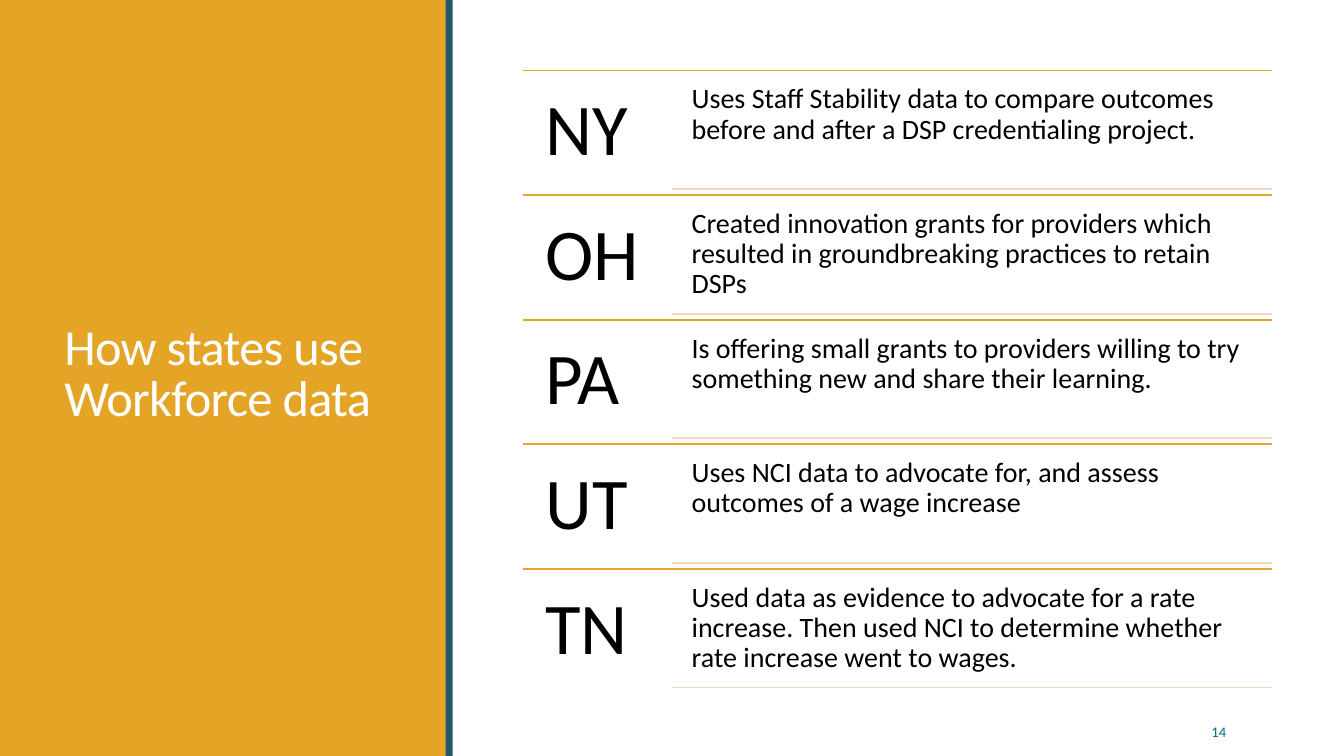
import dataclasses

import pptx
import pptx.dml.color
import pptx.enum.shapes
import pptx.enum.text
import pptx.oxml.ns
import pptx.shapes.autoshape
import pptx.slide
import pptx.util
import lxml.etree

Inches = pptx.util.Inches
Align = pptx.enum.text.PP_ALIGN
Anchor = pptx.enum.text.MSO_ANCHOR


@dataclasses.dataclass(frozen=True)
class Theme:
    gold: str = "E4A426"
    teal: str = "215968"
    peach: str = "F2D8BE"
    ink: str = "000000"
    white: str = "FFFFFF"
    page: str = "076D82"
    font: str = "Calibri"
    title_size: float = 36
    state_size: float = 52
    body_size: float = 20
    page_size: float = 10.5
    rule_width: float = 1.25


@dataclasses.dataclass(frozen=True)
class Box:
    left: float
    top: float
    width: float
    height: float


@dataclasses.dataclass(frozen=True)
class Style:
    size: float
    color: str
    inset: tuple[float, float] = (0.1, 0.05)
    anchor: Anchor = Anchor.TOP
    align: Align = Align.LEFT
    spacing: float = 1.0
    kern: float = 0


@dataclasses.dataclass(frozen=True)
class State:
    code: str
    use: str


THEME = Theme()
TITLE = Style(THEME.title_size, THEME.white, anchor=Anchor.MIDDLE, spacing=0.85, kern=-0.5)
CODE = Style(THEME.state_size, THEME.ink, (0.22, 0.22), spacing=0.9)
BODY = Style(THEME.body_size, THEME.ink, (0.08, 0.08), spacing=0.9)
PAGE = Style(THEME.page_size, THEME.page, anchor=Anchor.MIDDLE, align=Align.RIGHT)

STATES = [
    State("NY", "Uses Staff Stability data to compare outcomes before and after a DSP credentialing project."),
    State("OH", "Created innovation grants for providers which resulted in groundbreaking practices to retain DSPs"),
    State("PA", "Is offering small grants to providers willing to try something new and share their learning."),
    State("UT", "Uses NCI data to advocate for, and assess outcomes of a wage increase"),
    State("TN", "Used data as evidence to advocate for a rate increase. "
                "Then used NCI to determine whether rate increase went to wages."),
]

# Grid of the state list
LEFT, RIGHT, TOP, BOTTOM = 5.19, 12.62, 0.7, 6.88
PITCH = (BOTTOM - TOP) / len(STATES)
CODE_WIDTH = 1.49
BODY_LEFT = 6.78
RULE_LEFT = 6.67
GAP = 0.06


def paint(hue: str) -> pptx.dml.color.RGBColor:
    return pptx.dml.color.RGBColor.from_string(hue)


def add_bar(slide: pptx.slide.Slide, box: Box, hue: str) -> None:
    bar = slide.shapes.add_shape(
        pptx.enum.shapes.MSO_SHAPE.RECTANGLE,
        Inches(box.left), Inches(box.top), Inches(box.width), Inches(box.height))
    bar.shadow.inherit = False
    bar.fill.solid()
    bar.fill.fore_color.rgb = paint(hue)
    bar.line.fill.background()


def add_text(slide: pptx.slide.Slide, box: Box, text: str, style: Style) -> None:
    frame = slide.shapes.add_textbox(
        Inches(box.left), Inches(box.top), Inches(box.width), Inches(box.height)).text_frame
    frame.word_wrap = True
    frame.vertical_anchor = style.anchor
    frame.margin_left = frame.margin_right = Inches(style.inset[0])
    frame.margin_top = frame.margin_bottom = Inches(style.inset[1])
    para = frame.paragraphs[0]
    para.text = text
    para.alignment = style.align
    para.line_spacing = style.spacing
    para.font.name = THEME.font
    para.font.size = pptx.util.Pt(style.size)
    para.font.color.rgb = paint(style.color)
    if style.kern:
        # Letter spacing is in hundredths of a point
        para.runs[0]._r.get_or_add_rPr().set("spc", str(round(style.kern * 100)))


def add_rule(slide: pptx.slide.Slide, left: float, top: float, hue: str) -> None:
    rule = slide.shapes.add_connector(
        pptx.enum.shapes.MSO_CONNECTOR.STRAIGHT,
        Inches(left), Inches(top), Inches(RIGHT), Inches(top))
    rule.line.color.rgb = paint(hue)
    rule.line.width = pptx.util.Pt(THEME.rule_width)
    lxml.etree.SubElement(rule._element.spPr, pptx.oxml.ns.qn("a:effectLst"))


def add_state(slide: pptx.slide.Slide, state: State, top: float) -> None:
    body = Box(BODY_LEFT, top + GAP, RIGHT - BODY_LEFT, PITCH - 2 * GAP)
    add_rule(slide, LEFT, top, THEME.gold)
    add_text(slide, Box(LEFT, top, CODE_WIDTH, PITCH), state.code, CODE)
    add_text(slide, body, state.use, BODY)
    add_rule(slide, RULE_LEFT, top + PITCH - GAP, THEME.peach)


def main() -> None:
    deck = pptx.Presentation()
    deck.slide_width, deck.slide_height = Inches(13.33), Inches(7.5)
    slide = deck.slides.add_slide(deck.slide_layouts[6])

    # Title panel
    add_bar(slide, Box(0, 0, 4.43, 7.5), THEME.gold)
    add_text(slide, Box(0.54, 0.57, 3.37, 6.31), "How states use Workforce data", TITLE)
    add_bar(slide, Box(4.42, 0, 0.07, 7.5), THEME.teal)

    # Slide number
    add_text(slide, Box(11.07, 7.06, 1.19, 0.4), "14", PAGE)

    # State list
    for row, state in enumerate(STATES):
        add_state(slide, state, TOP + row * PITCH)

    deck.save("out.pptx")


if __name__ == "__main__":
    main()
